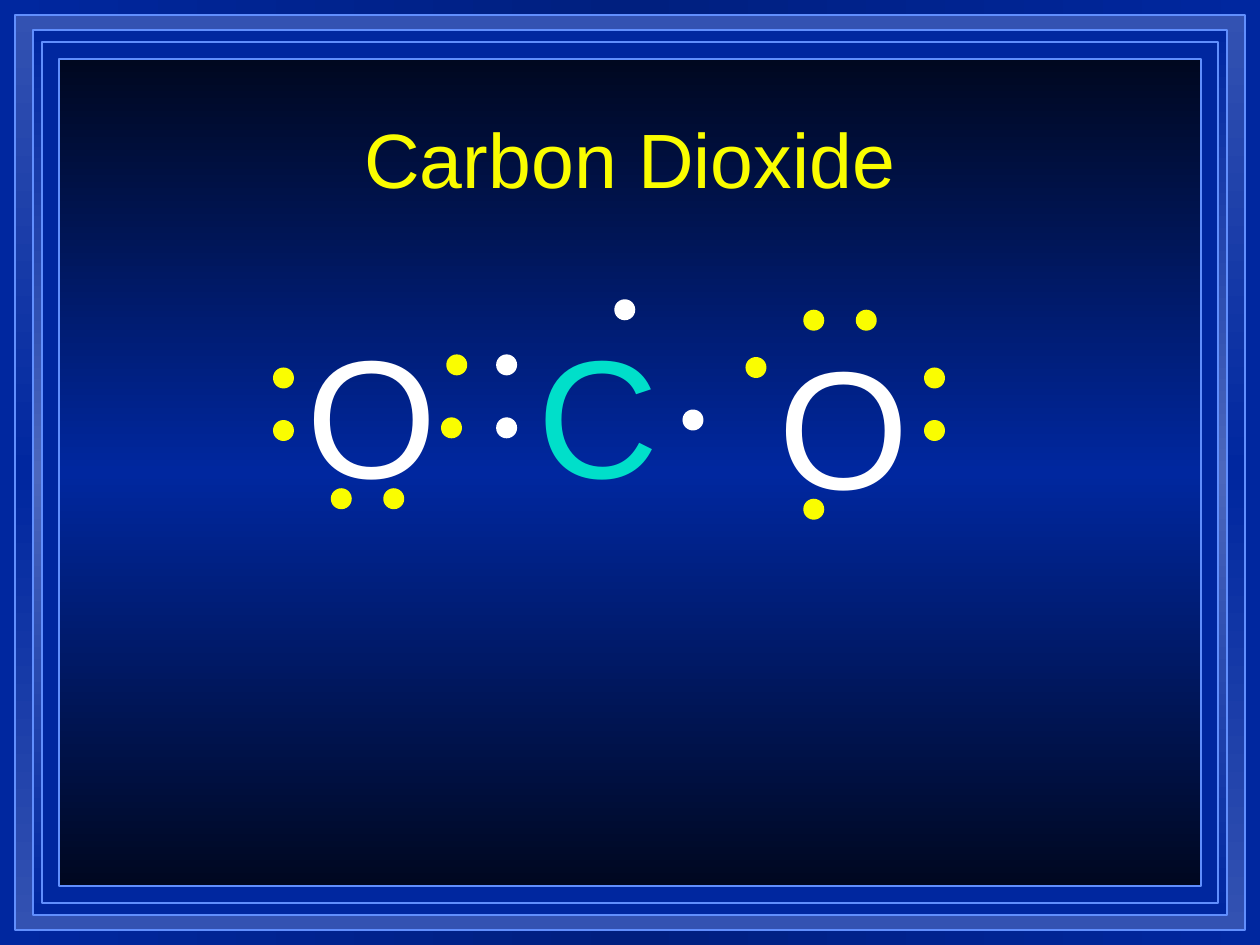
from copy import deepcopy
from dataclasses import dataclass

from pptx import Presentation
from pptx.dml.color import RGBColor
from pptx.enum.shapes import MSO_SHAPE
from pptx.enum.text import MSO_ANCHOR, PP_ALIGN
from pptx.util import Pt


@dataclass(frozen=True)
class Theme:
    """Colours, font and type sizes of the slide."""
    font: str = "Arial"
    title_size: int = 44
    symbol_size: int = 96
    yellow: str = "FAFD00"
    white: str = "FFFFFF"
    teal: str = "00DFCA"
    border: str = "618FFD"
    backdrop: tuple = ("00279F", "001F7F", "00279F")
    bevel: tuple = ("3352B2", "00279F", "3352B2")
    groove: tuple = ("00279F", "4C67BC", "00279F")
    mat: tuple = ("00279F",)
    panel: tuple = ("000820", "00279F", "000820")


THEME = Theme()
WIDTH, HEIGHT = 720, 540
DOT = 12
SYMBOL_WIDTH, SYMBOL_HEIGHT = 66, 122.4

TITLE = ("Carbon Dioxide", (54, 60, 612, 60))
FRAMES = [
    (8.5, 8.5, THEME.bevel),
    (18.75, 17.25, THEME.groove),
    (24, 24, THEME.mat),
    (33.75, 33.75, THEME.panel),
]
RIGHT_OXYGEN = ("O", THEME.white, 438, 180)
CARBON = ("C", THEME.teal, 300, 174)
LEFT_OXYGEN = ("O", THEME.white, 168, 174)
RIGHT_OXYGEN_DOTS = [(528, 210), (528, 240), (489, 177), (459, 177), (426, 204), (459, 285)]
CARBON_DOTS = [(390, 234), (351, 171), (283.5, 202.5), (283.5, 238.5)]
LEFT_OXYGEN_PAIRS = [[(156, 210), (156, 240)], [(219, 279), (189, 279)]]
LEFT_OXYGEN_BONDING_DOTS = [(252, 238.5), (255, 202.5)]


def paint(fill, element, colors, angle):
    """Apply one solid colour or three evenly spaced gradient stops."""
    if len(colors) == 1:
        fill.solid()
        fill.fore_color.rgb = RGBColor.from_string(colors[0])
        return
    fill.gradient()
    fill.gradient_angle = angle
    stops = element.xpath(".//a:gsLst")[0]
    stops.insert(1, deepcopy(stops[0]))
    for stop, color, position in zip(fill.gradient_stops, colors, (0, 0.5, 1)):
        stop.color.rgb = RGBColor.from_string(color)
        stop.position = position


def add_frame(page, inset_x, inset_y, colors):
    """Draw a bordered rectangle inset evenly from the slide edges."""
    frame = page.shapes.add_shape(
        MSO_SHAPE.RECTANGLE, Pt(inset_x), Pt(inset_y),
        Pt(WIDTH - 2 * inset_x), Pt(HEIGHT - 2 * inset_y))
    frame.shadow.inherit = False
    paint(frame.fill, frame.element, colors, 90)
    frame.line.color.rgb = RGBColor.from_string(THEME.border)
    frame.line.width = Pt(1)


def add_text(shapes, text, place, size, color, align, anchor):
    """Add a text box holding one run."""
    box = shapes.add_textbox(*map(Pt, place))
    box.text_frame.word_wrap = True
    box.text_frame.vertical_anchor = anchor
    para = box.text_frame.paragraphs[0]
    para.alignment = align
    span = para.add_run()
    span.text = text
    span.font.name = THEME.font
    span.font.size = Pt(size)
    span.font.color.rgb = RGBColor.from_string(color)


def add_symbol(shapes, text, color, left, top):
    """Add the large letter of an atom."""
    add_text(shapes, text, (left, top, SYMBOL_WIDTH, SYMBOL_HEIGHT),
             THEME.symbol_size, color, PP_ALIGN.LEFT, MSO_ANCHOR.TOP)


def add_dots(shapes, places, color):
    """Draw valence electrons as small discs."""
    for left, top in places:
        dot = shapes.add_shape(MSO_SHAPE.OVAL, Pt(left), Pt(top), Pt(DOT), Pt(DOT))
        dot.shadow.inherit = False
        paint(dot.fill, dot.element, (color,), 0)
        dot.line.fill.background()


def main():
    """Build the slide and save it."""
    deck = Presentation()
    deck.slide_width, deck.slide_height = Pt(WIDTH), Pt(HEIGHT)
    page = deck.slides.add_slide(deck.slide_layouts[6])
    paint(page.background.fill, page.element, THEME.backdrop, 0)

    for frame in FRAMES:
        add_frame(page, *frame)
    add_text(page.shapes, *TITLE, THEME.title_size, THEME.yellow,
             PP_ALIGN.CENTER, MSO_ANCHOR.MIDDLE)

    right_oxygen = page.shapes.add_group_shape()
    add_symbol(right_oxygen.shapes, *RIGHT_OXYGEN)
    add_dots(right_oxygen.shapes, RIGHT_OXYGEN_DOTS, THEME.yellow)

    add_symbol(page.shapes, *CARBON)
    add_dots(page.shapes, CARBON_DOTS, THEME.white)

    add_symbol(page.shapes, *LEFT_OXYGEN)
    for pair in LEFT_OXYGEN_PAIRS:
        add_dots(page.shapes.add_group_shape().shapes, pair, THEME.yellow)
    add_dots(page.shapes, LEFT_OXYGEN_BONDING_DOTS, THEME.yellow)

    deck.save("out.pptx")


if __name__ == "__main__":
    main()
